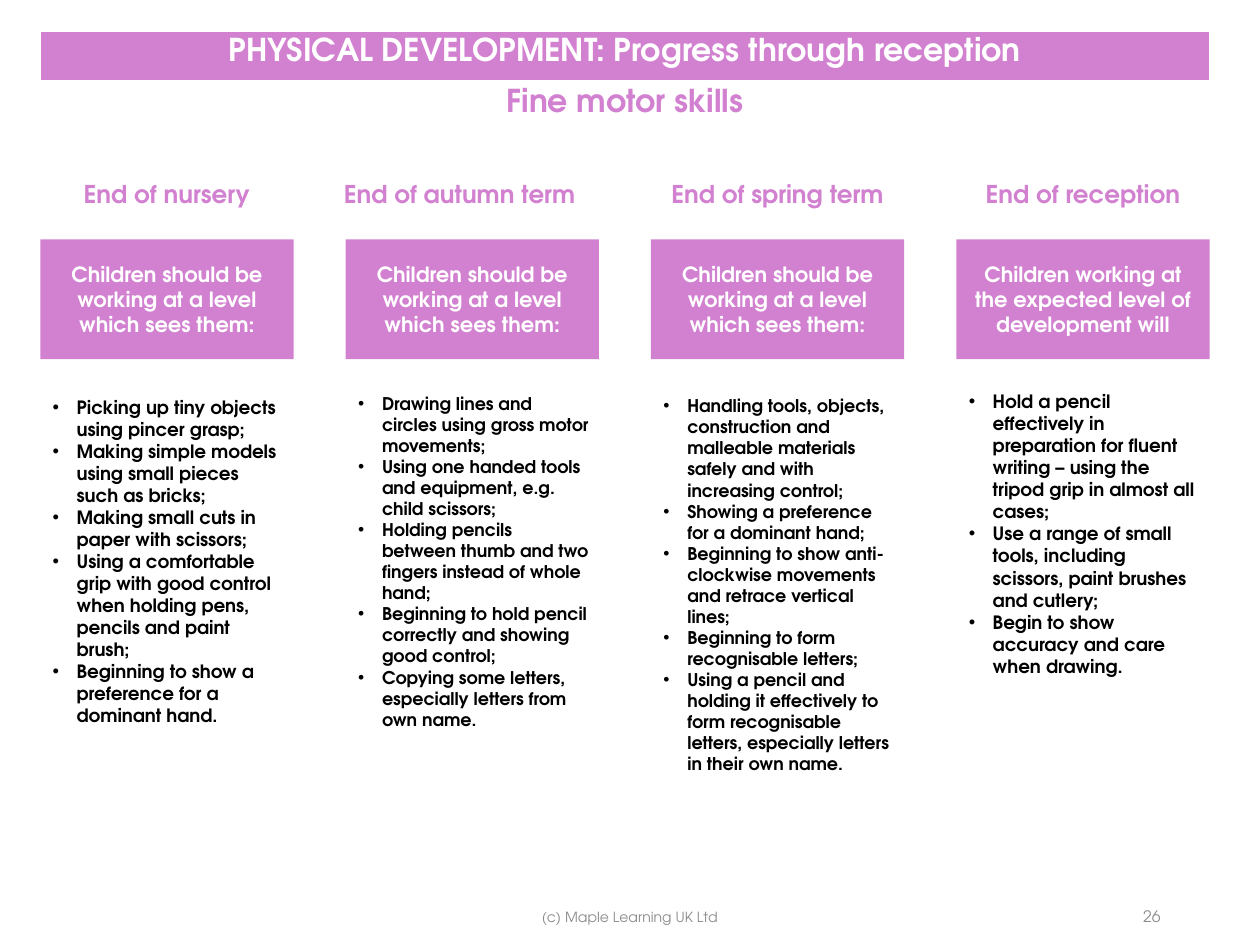
from lxml.etree import SubElement
from pptx import Presentation
from pptx.dml.color import RGBColor
from pptx.enum.shapes import MSO_SHAPE
from pptx.enum.text import MSO_ANCHOR, PP_ALIGN
from pptx.oxml.ns import qn
from pptx.util import Inches, Pt

FONT = "TeX Gyre Adventor"
COLORS = {"orchid": "D280D0", "white": "FFFFFF", "black": "000000", "grey": "8C8C8C"}
LEFT, WIDTH, COLUMN_WIDTH = 0.32, 9.28, 2.01

SEES_THEM = "Children should be working at a level which sees them:"
STAGES = [
    ("End of nursery", COLUMN_WIDTH, SEES_THEM, 10.5, 2.85, [
        "Picking up tiny objects using pincer grasp;",
        "Making simple models using small pieces such as bricks;",
        "Making small cuts in paper with scissors;",
        "Using a comfortable grip with good control when holding pens, pencils and paint brush;",
        "Beginning to show a preference for a dominant hand.",
    ]),
    ("End of autumn term", 2.21, SEES_THEM, 10, 2.85, [
        "Drawing lines and circles using gross motor movements;",
        "Using one handed tools and equipment, e.g. child scissors;",
        "Holding pencils between thumb and two fingers instead of whole hand;",
        "Beginning to hold pencil correctly and showing good control;",
        "Copying some letters, especially letters from own name.",
    ]),
    ("End of spring term", COLUMN_WIDTH, SEES_THEM, 10, 3.22, [
        "Handling tools, objects, construction and malleable materials safely and with increasing control;",
        "Showing a preference for a dominant hand;",
        "Beginning to show anti-clockwise movements and retrace vertical lines;",
        "Beginning to form recognisable letters;",
        "Using a pencil and holding it effectively to form recognisable letters, "
        "especially letters in their own name.",
    ]),
    ("End of reception", COLUMN_WIDTH,
     "Children working at the expected level of development will", 10.5, 2.41, [
         "Hold a pencil effectively in preparation for fluent writing – "
         "using the tripod grip in almost all cases;",
         "Use a range of small tools, including scissors, paint brushes and cutlery;",
         "Begin to show accuracy and care when drawing.",
     ]),
]


def write(para, text, size, color, bold=True, align=PP_ALIGN.CENTER):
    para.alignment = align
    span = para.add_run()
    span.text = text
    span.font.name = FONT
    span.font.size = Pt(size)
    span.font.bold = bold
    span.font.color.rgb = RGBColor.from_string(COLORS[color])


def add_box(left, top, width, height, anchor=MSO_ANCHOR.MIDDLE):
    box = page.shapes.add_textbox(Inches(left), Inches(top), Inches(width), Inches(height))
    box.text_frame.word_wrap = True
    box.text_frame.vertical_anchor = anchor
    return box.text_frame


deck = Presentation()
deck.slide_width = Inches(10)
deck.slide_height = Inches(7.5)
page = deck.slides.add_slide(deck.slide_layouts[6])
orchid = RGBColor.from_string(COLORS["orchid"])

title_table = page.shapes.add_table(
    2, 1, Inches(LEFT), Inches(0.25), Inches(WIDTH), Inches(0.81)).table
titles = [("PHYSICAL DEVELOPMENT: Progress through reception", "white", "a:lnB"),
          ("Fine motor skills", "orchid", "a:lnT")]
for row, (title, color, inner_edge) in enumerate(titles):
    cell = title_table.cell(row, 0)
    write(cell.text_frame.paragraphs[0], title, 18, color)
    border = SubElement(cell._tc.get_or_add_tcPr(), qn(inner_edge))
    border.set("w", str(Pt(3)))
    border_fill = SubElement(border, qn("a:solidFill"))
    SubElement(border_fill, qn("a:srgbClr")).set("val", COLORS["white"])
    if row == 0:
        cell.fill.solid()
        cell.fill.fore_color.rgb = orchid
    else:
        cell.fill.background()

step = (WIDTH - COLUMN_WIDTH) / (len(STAGES) - 1)
for column, (heading, heading_width, lead, size, height, skills) in enumerate(STAGES):
    left = LEFT + column * step

    heading_frame = add_box(left + COLUMN_WIDTH - heading_width, 1.37, heading_width, 0.34,
                            MSO_ANCHOR.TOP)
    write(heading_frame.paragraphs[0], heading, 14, "orchid")

    panel = page.shapes.add_shape(MSO_SHAPE.RECTANGLE, Inches(left), Inches(1.9),
                                  Inches(COLUMN_WIDTH), Inches(0.95))
    panel.shadow.inherit = False
    panel.fill.solid()
    panel.fill.fore_color.rgb = orchid
    panel.line.fill.background()
    panel.text_frame.word_wrap = True
    panel.text_frame.vertical_anchor = MSO_ANCHOR.MIDDLE
    write(panel.text_frame.paragraphs[0], lead, 12, "white")

    skills_frame = add_box(left, 3.03, COLUMN_WIDTH, height)
    skills_frame.margin_right = Inches(0.08)
    for index, skill in enumerate(skills):
        para = skills_frame.add_paragraph() if index else skills_frame.paragraphs[0]
        write(para, skill, size, "black", align=PP_ALIGN.LEFT)
        properties = para._p.get_or_add_pPr()
        properties.set("marL", str(Inches(0.19)))
        properties.set("indent", str(-Inches(0.19)))
        SubElement(properties, qn("a:buFont")).set("typeface", "Arial")
        SubElement(properties, qn("a:buChar")).set("char", "•")

footer_frame = add_box(3.31, 7.08, 3.38, 0.4)
write(footer_frame.paragraphs[0], "(c) Maple Learning UK Ltd", 8, "grey", bold=False)
number_frame = add_box(7.06, 7.07, 2.25, 0.4)
write(number_frame.paragraphs[0], "26", 9, "grey", bold=False, align=PP_ALIGN.RIGHT)

deck.save("out.pptx")
